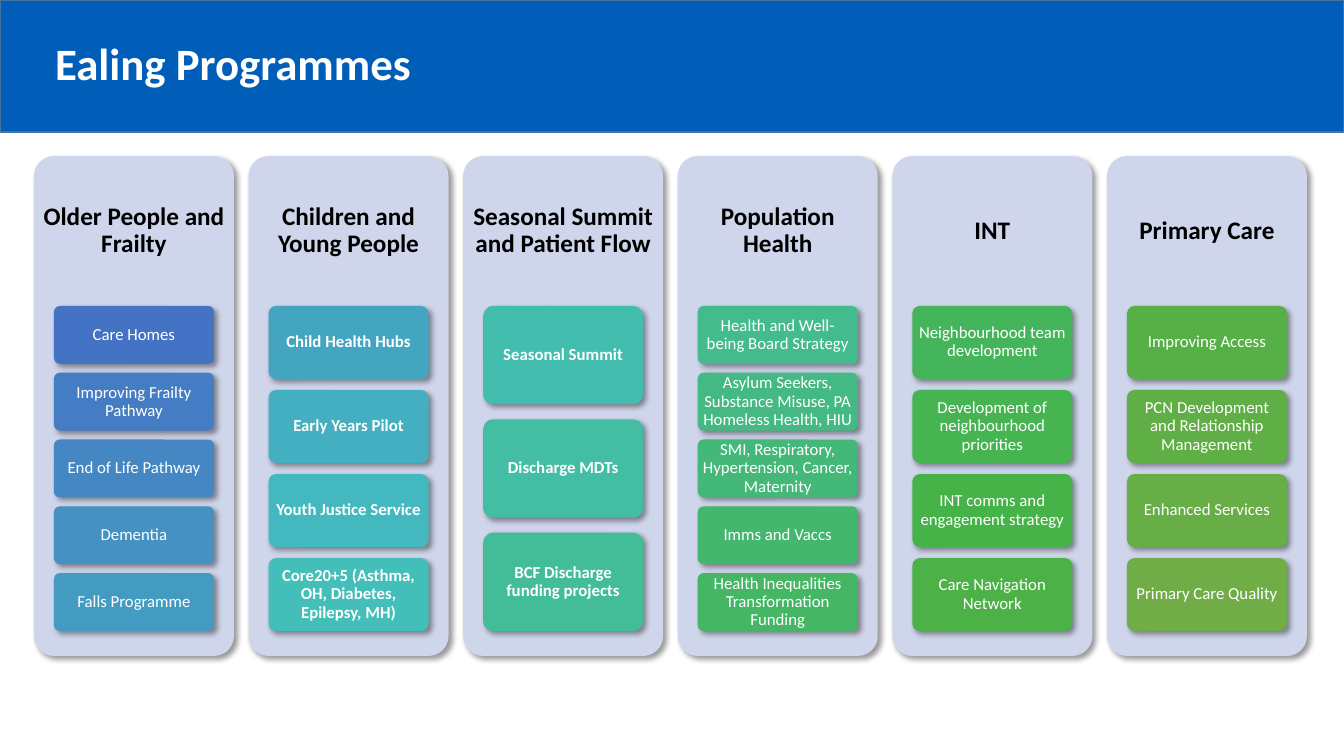
"""Build the Ealing Programmes slide: six programme columns with project boxes."""
from colorsys import hls_to_rgb, rgb_to_hls

from lxml.etree import SubElement
from pptx import Presentation
from pptx.dml.color import RGBColor
from pptx.enum.shapes import MSO_SHAPE as SHAPE
from pptx.enum.text import MSO_ANCHOR as ANCHOR, PP_ALIGN as ALIGN
from pptx.oxml.ns import qn
from pptx.util import Pt

TITLE = "Ealing Programmes"
PROGRAMMES = [
    ("Older People and Frailty", False,
     ["Care Homes", "Improving Frailty Pathway", "End of Life Pathway", "Dementia",
      "Falls Programme"]),
    ("Children and Young People", True,
     ["Child Health Hubs", "Early Years Pilot", "Youth Justice Service",
      "Core20+5 (Asthma, OH, Diabetes, Epilepsy, MH)"]),
    ("Seasonal Summit and Patient Flow", True,
     ["Seasonal Summit", "Discharge MDTs", "BCF Discharge funding projects"]),
    ("Population Health", False,
     ["Health and Well-being Board Strategy",
      "Asylum Seekers, Substance Misuse, PA Homeless Health, HIU",
      "SMI, Respiratory, Hypertension, Cancer, Maternity", "Imms and Vaccs",
      "Health Inequalities Transformation Funding"]),
    ("INT", False,
     ["Neighbourhood team development", "Development of neighbourhood priorities",
      "INT comms and engagement strategy", "Care Navigation Network"]),
    ("Primary Care", False,
     ["Improving Access", "PCN Development and Relationship Management",
      "Enhanced Services", "Primary Care Quality"]),
]
FONT = "Calibri"
FIRST, LAST = "4472C4", "70AD47"
SLIDE_W, SLIDE_H, BAR_H = 1344, 756, 132
LEFT, RIGHT, TOP = 34, 1307, 156
PANEL_W, PANEL_H, HEAD_H = 200, 500, 150
BOX_W, STACK_H = 160, 325
GAP_RATIO = 2 / 13


def px(n):
    return round(n * 914400 / 100.8)


def rgb(code):
    return RGBColor.from_string(code)


def blend(t):
    """Return the colour at t between FIRST and LAST, mixed by hue."""
    a, b = (rgb_to_hls(*(v / 255 for v in rgb(c))) for c in (FIRST, LAST))
    mixed = hls_to_rgb(*(u + (v - u) * t for u, v in zip(a, b)))
    return "".join(f"{round(v * 255):02X}" for v in mixed)


def write(sp, text, size, color, bold, margin=None, align=ALIGN.CENTER):
    tf = sp.text_frame
    tf.word_wrap = True
    tf.vertical_anchor = ANCHOR.MIDDLE
    if margin is not None:
        tf.margin_left = tf.margin_right = tf.margin_top = tf.margin_bottom = px(margin)
    p = tf.paragraphs[0]
    p.text = text
    p.alignment = align
    p.line_spacing = 0.9
    p.font.name, p.font.size, p.font.bold = FONT, Pt(size), bold
    p.font.color.rgb = rgb(color)


def add_block(s, kind, x, y, w, h, fill):
    sp = s.shapes.add_shape(kind, px(x), px(y), px(w), px(h))
    sp.shadow.inherit = False
    sp.fill.solid()
    sp.fill.fore_color.rgb = rgb(fill)
    sp.line.fill.background()
    return sp


def add_card(s, x, y, w, h, fill):
    sp = add_block(s, SHAPE.ROUNDED_RECTANGLE, x, y, w, h, fill)
    sp.adjustments[0] = 0.1
    effects = sp._element.spPr.find(qn("a:effectLst"))
    shadow = SubElement(effects, qn("a:outerShdw"), blurRad=str(Pt(4)), dist=str(Pt(3)),
                        dir="2700000", algn="ctr", rotWithShape="0")
    color = SubElement(shadow, qn("a:srgbClr"), val="000000")
    SubElement(color, qn("a:alpha"), val="40000")
    return sp


def add_title(s):
    title = s.shapes.title
    bar = add_block(s, SHAPE.RECTANGLE, 0, 0, SLIDE_W, BAR_H, "005EB8")
    bar.line.color.rgb = rgb("43739E")
    bar.line.width = Pt(1)
    title._element.addprevious(bar._element)
    title.left, title.top, title.width, title.height = map(px, (45, 36, 1254, 60))
    write(title, TITLE, 32, "FFFFFF", True, align=ALIGN.LEFT)


def add_programmes(s):
    pitch = (RIGHT - LEFT - PANEL_W) / (len(PROGRAMMES) - 1)
    total = sum(len(projects) for _, _, projects in PROGRAMMES)
    done = 0
    for col, (name, bold, projects) in enumerate(PROGRAMMES):
        x = LEFT + col * pitch
        add_card(s, x, TOP, PANEL_W, PANEL_H, "CFD5EA")
        head = s.shapes.add_textbox(px(x), px(TOP), px(PANEL_W), px(HEAD_H))
        write(head, name, 18, "000000", True, 7)
        n = len(projects)
        box_h = STACK_H / (n + (n - 1) * GAP_RATIO)
        for row, project in enumerate(projects):
            y = TOP + HEAD_H + row * box_h * (1 + GAP_RATIO)
            box = add_card(s, x + (PANEL_W - BOX_W) / 2, y, BOX_W, box_h,
                           blend(done / (total - 1)))
            write(box, project, 12, "FFFFFF", bold, 3)
            done += 1


def main():
    prs = Presentation()
    prs.slide_width, prs.slide_height = px(SLIDE_W), px(SLIDE_H)
    s = prs.slides.add_slide(prs.slide_layouts[5])
    add_title(s)
    add_programmes(s)
    prs.save("out.pptx")


if __name__ == "__main__":
    main()
